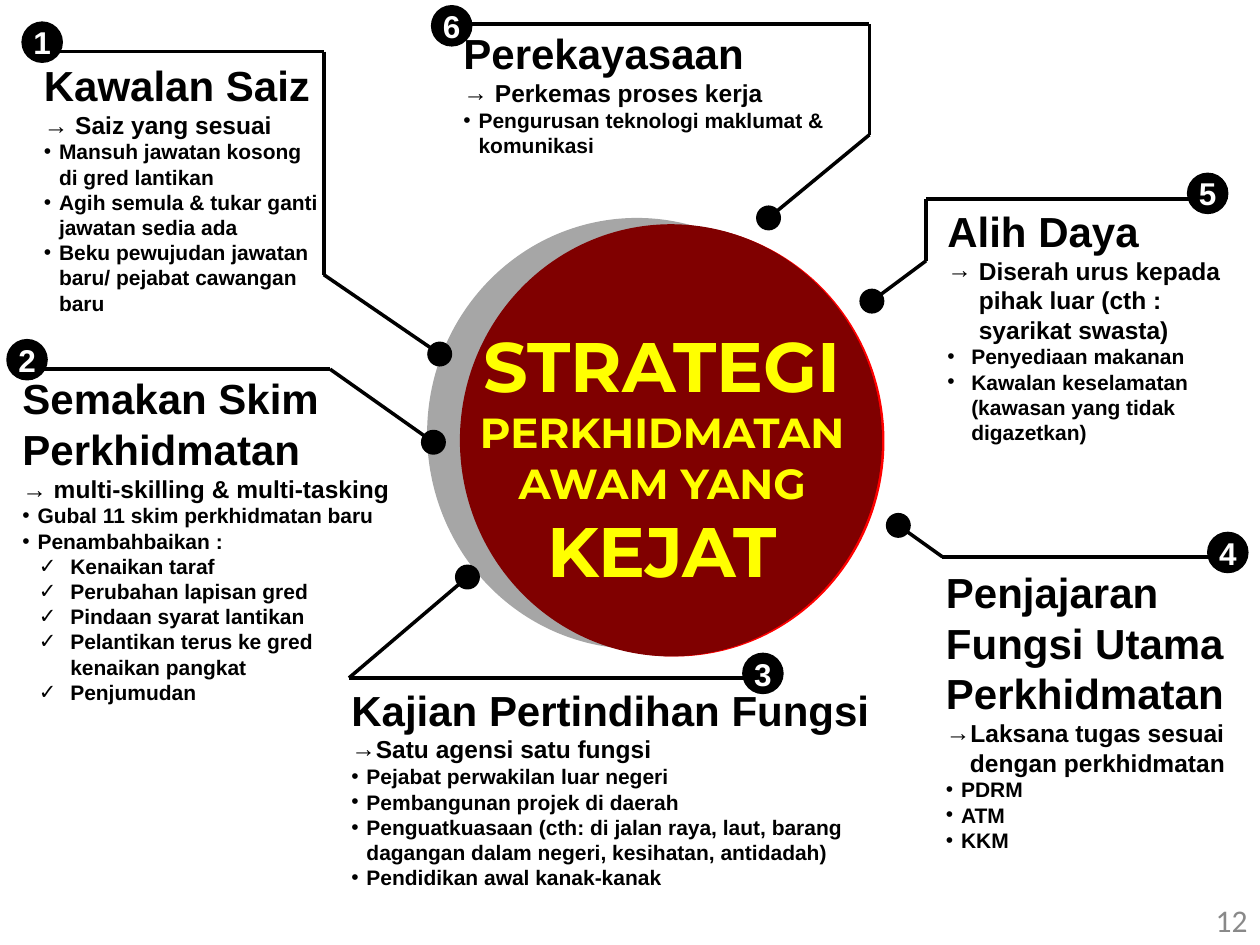
from dataclasses import dataclass
from itertools import pairwise

from lxml import etree
from pptx import Presentation
from pptx.dml.color import RGBColor
from pptx.enum.shapes import MSO_CONNECTOR, MSO_SHAPE
from pptx.enum.text import MSO_ANCHOR, MSO_AUTO_SIZE, PP_ALIGN
from pptx.oxml.ns import qn
from pptx.util import Inches, Pt

OVAL = MSO_SHAPE.OVAL
STRAIGHT = MSO_CONNECTOR.STRAIGHT
MIDDLE = MSO_ANCHOR.MIDDLE
CENTER, RIGHT = PP_ALIGN.CENTER, PP_ALIGN.RIGHT


@dataclass(frozen=True)
class Theme:
    black: RGBColor = RGBColor(0x00, 0x00, 0x00)
    white: RGBColor = RGBColor(0xFF, 0xFF, 0xFF)
    yellow: RGBColor = RGBColor(0xFF, 0xFF, 0x00)
    maroon: RGBColor = RGBColor(0x80, 0x00, 0x00)
    red: RGBColor = RGBColor(0xFF, 0x00, 0x00)
    shade: RGBColor = RGBColor(0xA6, 0xA6, 0xA6)
    gray: RGBColor = RGBColor(0x89, 0x89, 0x89)
    font: str = "Arial"
    display_font: str = "Montserrat"
    page_font: str = "Calibri"
    hero: int = 40
    heading: int = 24
    lead: int = 14
    body: int = 12
    badge: int = 18
    line: int = 2


T = Theme()
BADGE, DOT = 0.33, 0.17

# Paragraph styles: size, bullet, left margin, hanging indent
HEAD = (T.heading, None, 0, 0)
LEAD = (T.lead, None, 0.25, 0.25)
ARROW = (T.lead, "→", 0.25, 0.25)
TIGHT_ARROW = (T.lead, "→", 0.19, 0.19)
ITEM = (T.body, "•", 0.12, 0.12)
WIDE_ITEM = (T.body, "•", 0.19, 0.19)
CHECK = (T.body, "✓", 0.38, 0.25)

# Each callout: text box, badge corner, leader from badge to dot, paragraphs
CALLOUTS = [
    ((0.25, 0.42, 2.42, 2.15), (0.17, 0.17),
     [(0.27, 0.41), (2.57, 0.41), (2.57, 2.18), (3.49, 2.81)],
     [(HEAD, "Kawalan Saiz"), (LEAD, "→ Saiz yang sesuai"),
      (ITEM, "Mansuh jawatan kosong di gred lantikan"),
      (ITEM, "Agih semula & tukar ganti jawatan sedia ada"),
      (ITEM, "Beku pewujudan jawatan baru/ pejabat cawangan baru")]),
    ((0.08, 2.91, 3.17, 2.76), (0.05, 2.69),
     [(0.22, 2.93), (2.62, 2.93), (3.44, 3.51)],
     [(HEAD, "Semakan Skim Perkhidmatan"),
      (LEAD, "→ multi-skilling & multi-tasking"),
      (ITEM, "Gubal 11 skim perkhidmatan baru"), (ITEM, "Penambahbaikan :"),
      (CHECK, "Kenaikan taraf"), (CHECK, "Perubahan lapisan gred"),
      (CHECK, "Pindaan syarat lantikan"),
      (CHECK, "Pelantikan terus ke gred kenaikan pangkat"),
      (CHECK, "Penjumudan")]),
    ((2.69, 5.38, 4.39, 1.75), (5.89, 5.18),
     [(6.05, 5.38), (2.77, 5.38), (3.71, 4.58)],
     [(HEAD, "Kajian Pertindihan Fungsi"),
      (TIGHT_ARROW, "Satu agensi satu fungsi"),
      (ITEM, "Pejabat perwakilan luar negeri"),
      (ITEM, "Pembangunan projek di daerah"),
      (ITEM, "Penguatkuasaan (cth: di jalan raya, laut, barang dagangan "
             "dalam negeri, kesihatan, antidadah)"),
      (ITEM, "Pendidikan awal kanak-kanak")]),
    ((7.41, 4.45, 2.5, 2.39), (9.58, 4.22),
     [(9.75, 4.42), (7.48, 4.42), (7.13, 4.17)],
     [(HEAD, "Penjajaran Fungsi Utama Perkhidmatan"),
      (TIGHT_ARROW, "Laksana tugas sesuai dengan perkhidmatan"),
      (ITEM, "PDRM"), (ITEM, "ATM"), (ITEM, "KKM")]),
    ((7.42, 1.58, 2.42, 2.02), (9.42, 1.37),
     [(9.63, 1.58), (7.35, 1.58), (7.35, 2.07), (6.92, 2.39)],
     [(HEAD, "Alih Daya"),
      (ARROW, "Diserah urus kepada pihak luar (cth : syarikat swasta)"),
      (WIDE_ITEM, "Penyediaan makanan"),
      (WIDE_ITEM, "Kawalan keselamatan (kawasan yang tidak digazetkan)")]),
    ((3.58, 0.17, 3.25, 1.14), (3.42, 0.04),
     [(3.61, 0.19), (6.9, 0.19), (6.9, 1.07), (6.1, 1.73)],
     [(HEAD, "Perekayasaan"), (ARROW, "Perkemas proses kerja"),
      (ITEM, "Pengurusan teknologi maklumat & komunikasi")]),
]

# Disc layers from back to front
DISC = [((3.39, 1.73, 3.33, 3.42), T.shade),
        ((3.69, 1.79, 3.33, 3.42), T.red),
        ((3.65, 1.78, 3.35, 3.43), T.maroon)]

TITLE = [("STRATEGI", T.hero), ("PERKHIDMATAN AWAM YANG", T.heading),
         ("KEJAT", T.hero)]


def box(*lengths):
    return [Inches(v) for v in lengths]


def add_run(p, text, size, color, font=T.font, bold=True):
    r = p.add_run()
    r.text = text
    r.font.size = Pt(size)
    r.font.name = font
    r.font.bold = bold
    r.font.color.rgb = color


def set_bullet(p, char, margin, hanging):
    pPr = p._p.get_or_add_pPr()
    pPr.set("marL", str(Inches(margin)))
    pPr.set("indent", str(-Inches(hanging)))
    if char:
        etree.SubElement(pPr, qn("a:buFont")).set("typeface", T.font)
        etree.SubElement(pPr, qn("a:buChar")).set("char", char)


def paragraphs(tf, items):
    """Yield each item with its own paragraph, starting at the first one."""
    for i, item in enumerate(items):
        yield (tf.add_paragraph() if i else tf.paragraphs[0]), item


def add_oval(s, place, color, outline=False):
    sp = s.shapes.add_shape(OVAL, *box(*place))
    sp.shadow.inherit = False
    sp.fill.solid()
    sp.fill.fore_color.rgb = color
    if outline:
        sp.line.color.rgb = color
        sp.line.width = Pt(T.line)
    else:
        sp.line.fill.background()
    return sp


def add_text(s, place, items):
    tf = s.shapes.add_textbox(*box(*place)).text_frame
    tf.word_wrap = True
    for p, (style, text) in paragraphs(tf, items):
        size, *bullet = style
        set_bullet(p, *bullet)
        add_run(p, text, size, T.black)


def add_leader(s, points):
    for start, end in pairwise(points):
        line = s.shapes.add_connector(STRAIGHT, *box(*start, *end))
        line.line.color.rgb = T.black
        line.line.width = Pt(T.line)
        etree.SubElement(line._element.spPr, qn("a:effectLst"))
    x, y = points[-1]
    add_oval(s, (x - DOT / 2, y - DOT / 2, DOT, DOT), T.black, outline=True)


def add_badge(s, corner, number):
    tf = add_oval(s, (*corner, BADGE, BADGE), T.black).text_frame
    tf.margin_left = tf.margin_right = tf.margin_top = tf.margin_bottom = 0
    tf.word_wrap = False
    tf.vertical_anchor = MIDDLE
    p = tf.paragraphs[0]
    p.alignment = CENTER
    add_run(p, str(number), T.badge, T.white)


def add_title(s):
    title = s.shapes.title
    title.left, title.top, title.width, title.height = box(3.43, 2.47, 3.65, 2.32)
    s.shapes._spTree.append(title._element)  # bring in front of the disc
    tf = title.text_frame
    tf.word_wrap = True
    tf.auto_size = MSO_AUTO_SIZE.NONE
    tf.vertical_anchor = MIDDLE
    for p, (text, size) in paragraphs(tf, TITLE):
        p.alignment = CENTER
        add_run(p, text, size, T.yellow, T.display_font)


def add_page_number(s, number):
    tf = s.shapes.add_textbox(*box(7.67, 7.1, 2.33, 0.4)).text_frame
    tf.word_wrap = True
    tf.vertical_anchor = MIDDLE
    p = tf.paragraphs[0]
    p.alignment = RIGHT
    add_run(p, str(number), T.badge, T.gray, T.page_font, bold=False)


def main():
    prs = Presentation()
    prs.slide_width, prs.slide_height = box(10, 7.5)
    s = prs.slides.add_slide(prs.slide_layouts[5])

    # Central disc and its title
    for place, color in DISC:
        add_oval(s, place, color)
    add_title(s)

    # Six numbered strategies around the disc
    for number, (place, corner, leader, items) in enumerate(CALLOUTS, 1):
        add_text(s, place, items)
        add_leader(s, leader)
        add_badge(s, corner, number)

    add_page_number(s, 12)
    prs.save("out.pptx")


if __name__ == "__main__":
    main()
